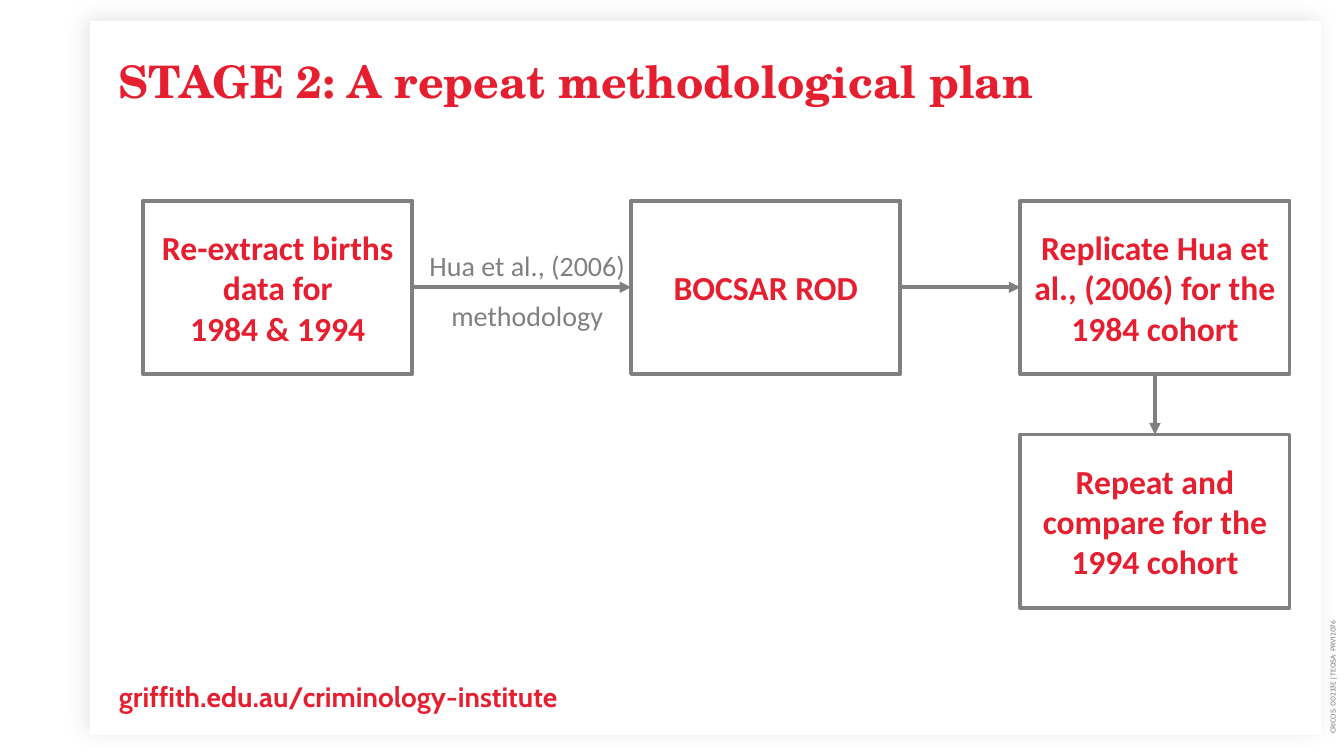
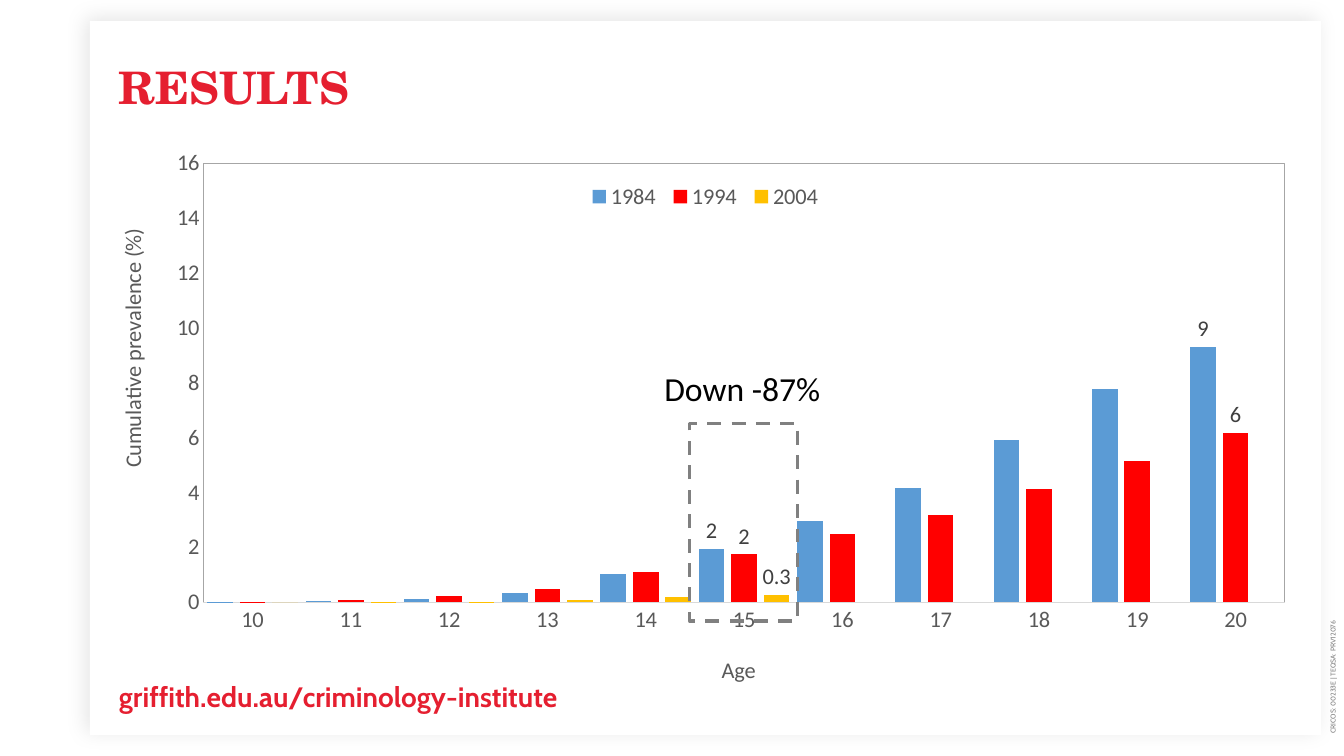
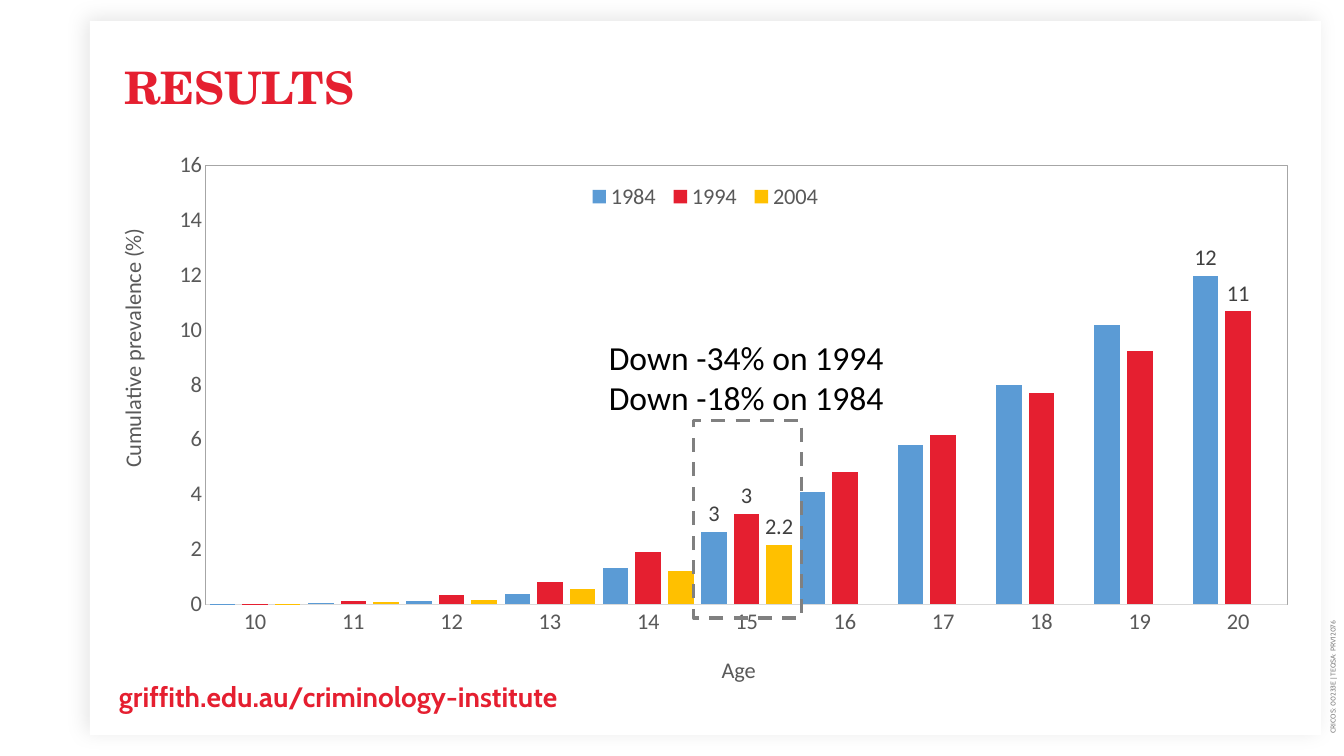
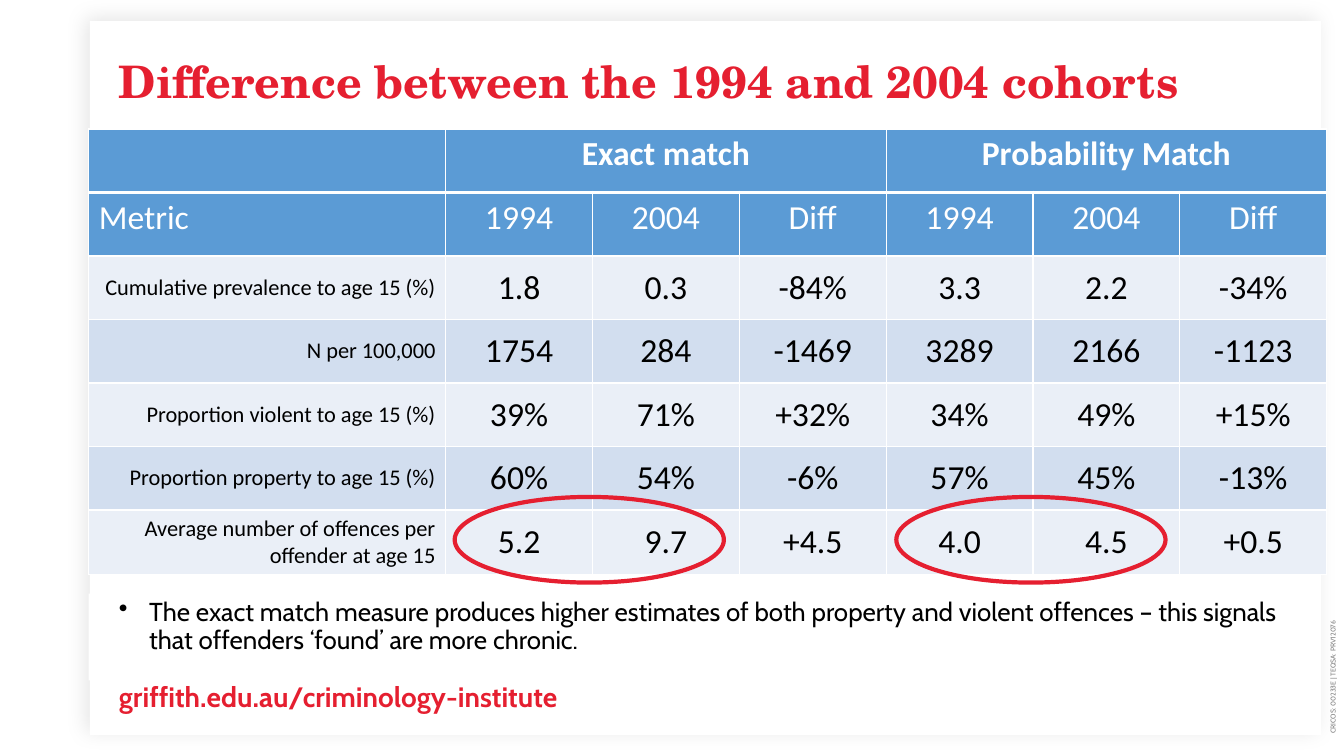
from dataclasses import dataclass
from typing import Any, Optional

from lxml.etree import SubElement
from pptx import Presentation
from pptx.chart.data import CategoryChartData
from pptx.dml.color import RGBColor
from pptx.enum.chart import XL_CHART_TYPE, XL_LABEL_POSITION, XL_LEGEND_POSITION, XL_TICK_MARK
from pptx.enum.dml import MSO_LINE
from pptx.enum.shapes import MSO_CONNECTOR, MSO_SHAPE
from pptx.enum.text import MSO_ANCHOR, MSO_AUTO_SIZE, PP_ALIGN
from pptx.oxml import parse_xml
from pptx.oxml.ns import nsdecls, qn
from pptx.util import Inches, Pt

COLORS = {
    "red": "E51F30", "gray": "808080", "white": "FFFFFF", "black": "000000",
    "blue": "5B9BD5", "bright": "FF0000", "gold": "FFC000",
    "axis": "595959", "axis_line": "D9D9D9", "frame": "A6A6A6", "label": "404040",
    "band_light": "EAEFF7", "band_dark": "D2DEEF",
}
NO_INSETS = (0, 0, 0, 0)
DEFAULT_INSETS = (0.1, 0.05, 0.1, 0.05)
Area = tuple[float, float, float, float]


@dataclass(frozen=True)
class TextStyle:
    size: float
    color: str
    font: str = "Calibri"
    bold: bool = False
    align: PP_ALIGN = PP_ALIGN.LEFT
    spacing: float = 1.0
    after: float = 0


TITLE = TextStyle(32, "red", "TeX Gyre Schola", True, spacing=0.8)
FOOTER = TextStyle(20, "red", "Cabin", True, spacing=1.1, after=10)
SIDE_MARK = TextStyle(5, "gray", "Cabin")
STEP = TextStyle(24, "red", bold=True, align=PP_ALIGN.CENTER)
METHOD = TextStyle(20, "gray", align=PP_ALIGN.CENTER, spacing=1.5)
CALLOUT = TextStyle(24, "black")
NOTE = TextStyle(18.5, "black", "Cabin", spacing=0.9, after=10)
CELL = TextStyle(24, "black", align=PP_ALIGN.CENTER)
ROW_LABEL = TextStyle(16, "black", align=PP_ALIGN.RIGHT)
GROUP_HEAD = TextStyle(24, "white", bold=True, align=PP_ALIGN.CENTER)
COLUMN_HEAD = TextStyle(24, "white", align=PP_ALIGN.CENTER)
METRIC_HEAD = TextStyle(24, "white")


@dataclass(frozen=True)
class Series:
    name: str
    color: str
    values: list[Optional[float]]
    labelled: tuple[int, ...] = (5, 10)
    number_format: str = "0"


@dataclass(frozen=True)
class ResultsPage:
    title_left: float
    plot: Area
    series: list[Series]
    marker: Area
    callout: list[str]
    callout_area: Area


# Formatting helpers
def rgb(name: str) -> RGBColor:
    return RGBColor.from_string(COLORS[name])


def apply(target: Any, values: dict[str, Any]) -> None:
    for name, value in values.items():
        setattr(target, name, value)


def style_font(font: Any, style: TextStyle) -> None:
    apply(font, {"name": style.font, "size": Pt(style.size), "bold": style.bold})
    font.color.rgb = rgb(style.color)


def write(frame: Any, lines: list[str], style: TextStyle) -> None:
    for index, line in enumerate(lines):
        para = frame.add_paragraph() if index else frame.paragraphs[0]
        para.text = line
        apply(para, {"alignment": style.align, "line_spacing": style.spacing,
                     "space_before": Pt(0), "space_after": Pt(style.after)})
        for span in para.runs:
            style_font(span.font, style)


def set_frame(frame: Any, insets: Area = DEFAULT_INSETS, anchor: MSO_ANCHOR = MSO_ANCHOR.TOP,
              wrap: bool = True) -> None:
    sides = ("margin_left", "margin_top", "margin_right", "margin_bottom")
    apply(frame, {side: Inches(inset) for side, inset in zip(sides, insets)})
    fit = MSO_AUTO_SIZE.NONE if wrap else MSO_AUTO_SIZE.SHAPE_TO_FIT_TEXT
    apply(frame, {"vertical_anchor": anchor, "word_wrap": wrap, "auto_size": fit})


def place(shape: Any, area: Area) -> None:
    apply(shape, dict(zip(("left", "top", "width", "height"), map(Inches, area))))


def add_text(page: Any, area: Area, lines: list[str], style: TextStyle, **frame_format: Any) -> Any:
    box = page.shapes.add_textbox(*map(Inches, area))
    set_frame(box.text_frame, **frame_format)
    write(box.text_frame, lines, style)
    return box


def add_shape(page: Any, kind: MSO_SHAPE, area: Area, fill: Optional[str] = None,
              line: Optional[str] = None, width: float = 1) -> Any:
    shape = page.shapes.add_shape(kind, *map(Inches, area))
    shape.shadow.inherit = False
    if fill:
        shape.fill.solid()
        shape.fill.fore_color.rgb = rgb(fill)
    else:
        shape.fill.background()
    if line:
        shape.line.color.rgb = rgb(line)
        shape.line.width = Pt(width)
    else:
        shape.line.fill.background()
    return shape


# Shared page parts
def add_panel(page: Any, layout: Any) -> None:
    """Build the shadowed panel and hand it to the layout, behind every slide."""
    panel = add_shape(page, MSO_SHAPE.RECTANGLE, (0.89, 0.21, 12.21, 7.08), "white")
    effects = panel._element.spPr.find(qn("a:effectLst"))
    effects.append(parse_xml(
        f'<a:outerShdw {nsdecls("a")} blurRad="{Pt(15)}" dist="{Pt(3)}" dir="{225 * 60000}" '
        f'algn="ctr" rotWithShape="0"><a:srgbClr val="{COLORS["black"]}">'
        '<a:alpha val="10000"/></a:srgbClr></a:outerShdw>'))
    layout.shapes._spTree.append(panel._element)


def add_page(deck: Any, title: str, left: float = 0.88, top: float = 0.59) -> Any:
    page = deck.slides.add_slide(deck.slide_layouts[5])
    heading = page.shapes.title
    place(heading, (left, top, 12.14, 0.69))
    set_frame(heading.text_frame, (0.3, 0.05, 0.2, 0.05))
    write(heading.text_frame, [title], TITLE)
    mark = add_text(page, (9.69, 3.64, 7.06, 0.22), ["CRICOS: 00233E | TEQSA: PRV12076"],
                    SIDE_MARK, insets=NO_INSETS, anchor=MSO_ANCHOR.MIDDLE)
    mark.rotation = 270
    return page


def add_footer(page: Any) -> None:
    add_text(page, (0.88, 6.51, 12.14, 0.78), ["griffith.edu.au/criminology-institute"],
             FOOTER, insets=(0.3, 0.2, 0.2, 0.2))


# Flow chart
def add_step(page: Any, left: float, top: float, text: str) -> Any:
    step = add_shape(page, MSO_SHAPE.RECTANGLE, (left, top, 2.67, 1.72), line="gray", width=2.75)
    set_frame(step.text_frame, anchor=MSO_ANCHOR.MIDDLE)
    write(step.text_frame, [text], STEP)
    return step


def add_arrow(page: Any, start: Any, start_side: int, end: Any, end_side: int) -> None:
    arrow = page.shapes.add_connector(MSO_CONNECTOR.STRAIGHT, 0, 0, 0, 0)
    arrow.begin_connect(start, start_side)
    arrow.end_connect(end, end_side)
    arrow.line.color.rgb = rgb("gray")
    arrow.line.width = Pt(2.75)
    SubElement(arrow.line._get_or_add_ln(), qn("a:tailEnd"), type="triangle")
    SubElement(arrow._element.spPr, qn("a:effectLst"))


def build_plan(page: Any) -> None:
    births = add_step(page, 1.42, 1.99, "Re-extract births data for\n1984 & 1994")
    offending = add_step(page, 6.26, 1.99, "BOCSAR ROD")
    replicate = add_step(page, 10.12, 1.99, "Replicate Hua et al., (2006) for the 1984 cohort")
    repeat = add_step(page, 10.12, 4.31, "Repeat and compare for the 1994 cohort")
    add_arrow(page, births, 3, offending, 1)
    add_arrow(page, offending, 3, replicate, 1)
    add_arrow(page, replicate, 2, repeat, 0)
    add_text(page, (4.15, 2.25, 2.16, 1.06), ["Hua et al., (2006)", "methodology"], METHOD, wrap=False)
    add_footer(page)


# Column charts
def set_layout(parent: Any, index: int, values: dict[str, float], inner: bool = False) -> None:
    old = parent.find(qn("c:layout"))
    if old is not None:
        parent.remove(old)
    layout = parse_xml(f'<c:layout {nsdecls("c")}><c:manualLayout/></c:layout>')
    manual = layout[0]
    if inner:
        SubElement(manual, qn("c:layoutTarget"), val="inner")
    for name in ("x", "y"):
        SubElement(manual, qn(f"c:{name}Mode"), val="edge")
    for name, value in values.items():
        SubElement(manual, qn(f"c:{name}"), val=str(value))
    parent.insert(index, layout)


def style_axis(axis: Any, title: str, x: float, y: float, rotation: int) -> None:
    style = TextStyle(16, "axis")
    apply(axis, {"has_major_gridlines": False, "has_title": True,
                 "major_tick_mark": XL_TICK_MARK.NONE, "minor_tick_mark": XL_TICK_MARK.NONE})
    style_font(axis.tick_labels.font, style)
    frame = axis.axis_title.text_frame
    write(frame, [title], TextStyle(16, "axis", align=PP_ALIGN.CENTER))
    frame._bodyPr.set("rot", str(rotation * 60000))
    set_layout(axis.axis_title._element, 1, {"x": x, "y": y})


def style_series(series: Any, data: Series) -> None:
    series.format.fill.solid()
    series.format.fill.fore_color.rgb = rgb(data.color)
    series.invert_if_negative = False
    apply(series.data_labels, {"show_value": False, "number_format": data.number_format,
                               "number_format_is_linked": False})
    for index in data.labelled:
        label = series.points[index].data_label
        style_font(label.font, TextStyle(16, "label"))
        label.position = XL_LABEL_POSITION.OUTSIDE_END
    for element in series._element.iter(qn("c:dLbl")):
        element.insert(1, parse_xml(
            f'<c:numFmt {nsdecls("c")} formatCode="{data.number_format}" sourceLinked="0"/>'))


def add_prevalence_chart(page: Any, results: ResultsPage) -> None:
    data = CategoryChartData()
    data.categories = [str(age) for age in range(10, 21)]
    for item in results.series:
        data.add_series(item.name, item.values + [None] * (11 - len(item.values)))
    area = map(Inches, (0.88, 1.34, 12.23, 5.56))
    chart = page.shapes.add_chart(XL_CHART_TYPE.COLUMN_CLUSTERED, *area, data).chart
    apply(chart, {"has_title": False, "has_legend": True})
    style_font(chart.font, TextStyle(16, "black"))

    # Plot and its frame
    plot = chart.plots[0]
    apply(plot, {"gap_width": 30, "overlap": -27, "vary_by_categories": False})
    for series, item in zip(plot.series, results.series):
        style_series(series, item)
    plot_area = chart._chartSpace.chart.plotArea
    set_layout(plot_area, 0, dict(zip("xywh", results.plot)), inner=True)
    plot_area.append(parse_xml(
        f'<c:spPr {nsdecls("c", "a")}><a:noFill/><a:ln w="{Pt(0.75)}"><a:solidFill>'
        f'<a:srgbClr val="{COLORS["frame"]}"/></a:solidFill></a:ln></c:spPr>'))

    # Axes and legend
    style_axis(chart.category_axis, "Age", 0.51, 0.92, 0)
    chart.category_axis.format.line.color.rgb = rgb("axis_line")
    chart.category_axis.format.line.width = Pt(0.75)
    style_axis(chart.value_axis, "Cumulative prevalence (%)", 0.02, 0.16, -90)
    apply(chart.value_axis, {"minimum_scale": 0, "maximum_scale": 16, "major_unit": 2})
    apply(chart.value_axis.tick_labels, {"number_format": "0", "number_format_is_linked": False})
    chart.value_axis.format.line.fill.background()
    apply(chart.legend, {"position": XL_LEGEND_POSITION.BOTTOM, "include_in_layout": False})
    style_font(chart.legend.font, TextStyle(16, "axis"))
    set_layout(chart.legend._element, 1, {"x": 0.4, "y": 0.08, "w": 0.2, "h": 0.06})


def build_results(page: Any, results: ResultsPage) -> None:
    add_prevalence_chart(page, results)
    marker = add_shape(page, MSO_SHAPE.RECTANGLE, results.marker, line="gray", width=2.5)
    marker.line.dash_style = MSO_LINE.DASH
    add_text(page, results.callout_area, results.callout, CALLOUT, wrap=False)
    add_footer(page)


RESULTS = [
    ResultsPage(
        0.88, (0.093, 0.051, 0.877, 0.783),
        [Series("1984", "blue", [0.01, 0.04, 0.12, 0.34, 1.04, 1.95, 2.95, 4.16, 5.91, 7.77, 9.31]),
         Series("1994", "bright", [0.02, 0.09, 0.23, 0.5, 1.09, 1.75, 2.49, 3.18, 4.13, 5.17, 6.17]),
         Series("2004", "gold", [0, 0.01, 0.03, 0.1, 0.18, 0.28], (5,), "0.0")],
        (6.84, 4.2, 1.07, 1.96), ["Down -87%"], (6.49, 3.6, 1.76, 0.5)),
    ResultsPage(
        0.93, (0.095, 0.054, 0.877, 0.783),
        [Series("1984", "blue", [0.01, 0.04, 0.12, 0.37, 1.33, 2.63, 4.1, 5.79, 7.98, 10.16, 11.98]),
         Series("1994", "red", [0.02, 0.12, 0.32, 0.81, 1.9, 3.29, 4.81, 6.17, 7.69, 9.23, 10.67]),
         Series("2004", "gold", [0.01, 0.07, 0.16, 0.54, 1.19, 2.17], (5,), "0.0")],
        (6.88, 4.17, 1.07, 1.96), ["Down -34% on 1994", "Down -18% on 1984"],
        (5.94, 3.29, 2.95, 0.91)),
]

# Cohort table
COHORT_ROWS = [
    ["", "Exact match", "", "", "Probability Match", "", ""],
    ["Metric"] + ["1994", "2004", "Diff"] * 2,
    ["Cumulative prevalence to age 15 (%)", "1.8", "0.3", "-84%", "3.3", "2.2", "-34%"],
    ["N per 100,000", "1754", "284", "-1469", "3289", "2166", "-1123"],
    ["Proportion violent to age 15 (%)", "39%", "71%", "+32%", "34%", "49%", "+15%"],
    ["Proportion property to age 15 (%)", "60%", "54%", "-6%", "57%", "45%", "-13%"],
    ["Average number of offences per offender at age 15", "5.2", "9.7", "+4.5", "4.0", "4.5", "+0.5"],
]


def cell_style(row: int, column: int) -> TextStyle:
    if row == 0:
        return GROUP_HEAD
    if row == 1:
        return COLUMN_HEAD if column else METRIC_HEAD
    return CELL if column else ROW_LABEL


def set_borders(cell: Any, row: int) -> None:
    widths = {"lnL": 1, "lnR": 1, "lnT": 3 if row == 1 else 1, "lnB": 3 if row == 0 else 1}
    properties = cell._tc.get_or_add_tcPr()
    for index, (tag, width) in enumerate(widths.items()):
        properties.insert(index, parse_xml(
            f'<a:{tag} {nsdecls("a")} w="{Pt(width)}"><a:solidFill>'
            f'<a:srgbClr val="{COLORS["white"]}"/></a:solidFill></a:{tag}>'))


def add_cohort_table(page: Any) -> None:
    label_width, table_width, row_height = 3.54, 12.28, 0.63
    row_count, column_count = len(COHORT_ROWS), len(COHORT_ROWS[0])
    area = map(Inches, (0.88, 1.28, table_width, row_height * row_count))
    table = page.shapes.add_table(row_count, column_count, *area).table
    apply(table, {"first_row": False, "horz_banding": False})
    for index, column in enumerate(table.columns):
        value_width = (table_width - label_width) / (column_count - 1)
        column.width = Inches(value_width if index else label_width)
    for first in (1, 4):
        table.cell(0, first).merge(table.cell(0, first + 2))
    for row, texts in enumerate(COHORT_ROWS):
        table.rows[row].height = Inches(row_height)
        band = "blue" if row < 2 else ("band_light", "band_dark")[row % 2]
        for column, text in enumerate(texts):
            cell = table.cell(row, column)
            cell.fill.solid()
            cell.fill.fore_color.rgb = rgb(band)
            cell.vertical_anchor = MSO_ANCHOR.TOP if row < 2 else MSO_ANCHOR.MIDDLE
            set_borders(cell, row)
            if text:
                write(cell.text_frame, [text], cell_style(row, column))


def build_cohorts(page: Any) -> None:
    add_cohort_table(page)
    note = add_shape(page, MSO_SHAPE.RECTANGLE, (0.88, 5.89, 12.14, 0.86), "white")
    set_frame(note.text_frame, (0.3, 0.05, 0.2, 0.2))
    write(note.text_frame, ["The exact match measure produces higher estimates of both property and "
                            "violent offences – this signals that offenders ‘found’ are more chronic."], NOTE)
    properties = note.text_frame.paragraphs[0]._p.get_or_add_pPr()
    apply_indent = {"marL": Inches(0.3), "indent": Inches(-0.3)}
    for name, value in apply_indent.items():
        properties.set(name, str(value))
    SubElement(properties, qn("a:buChar"), char="•")
    for left in (4.51, 8.89):
        add_shape(page, MSO_SHAPE.OVAL, (left, 4.93, 2.67, 0.85), line="red", width=3)
    add_footer(page)


def main() -> None:
    deck = Presentation()
    apply(deck, {"slide_width": Inches(13.33), "slide_height": Inches(7.5)})
    plan = add_page(deck, "STAGE 2: A repeat methodological plan")
    add_panel(plan, deck.slide_layouts[5])
    build_plan(plan)
    for results in RESULTS:
        build_results(add_page(deck, "RESULTS", results.title_left, 0.65), results)
    build_cohorts(add_page(deck, "Difference between the 1994 and 2004 cohorts"))
    deck.save("out.pptx")


if __name__ == "__main__":
    main()
